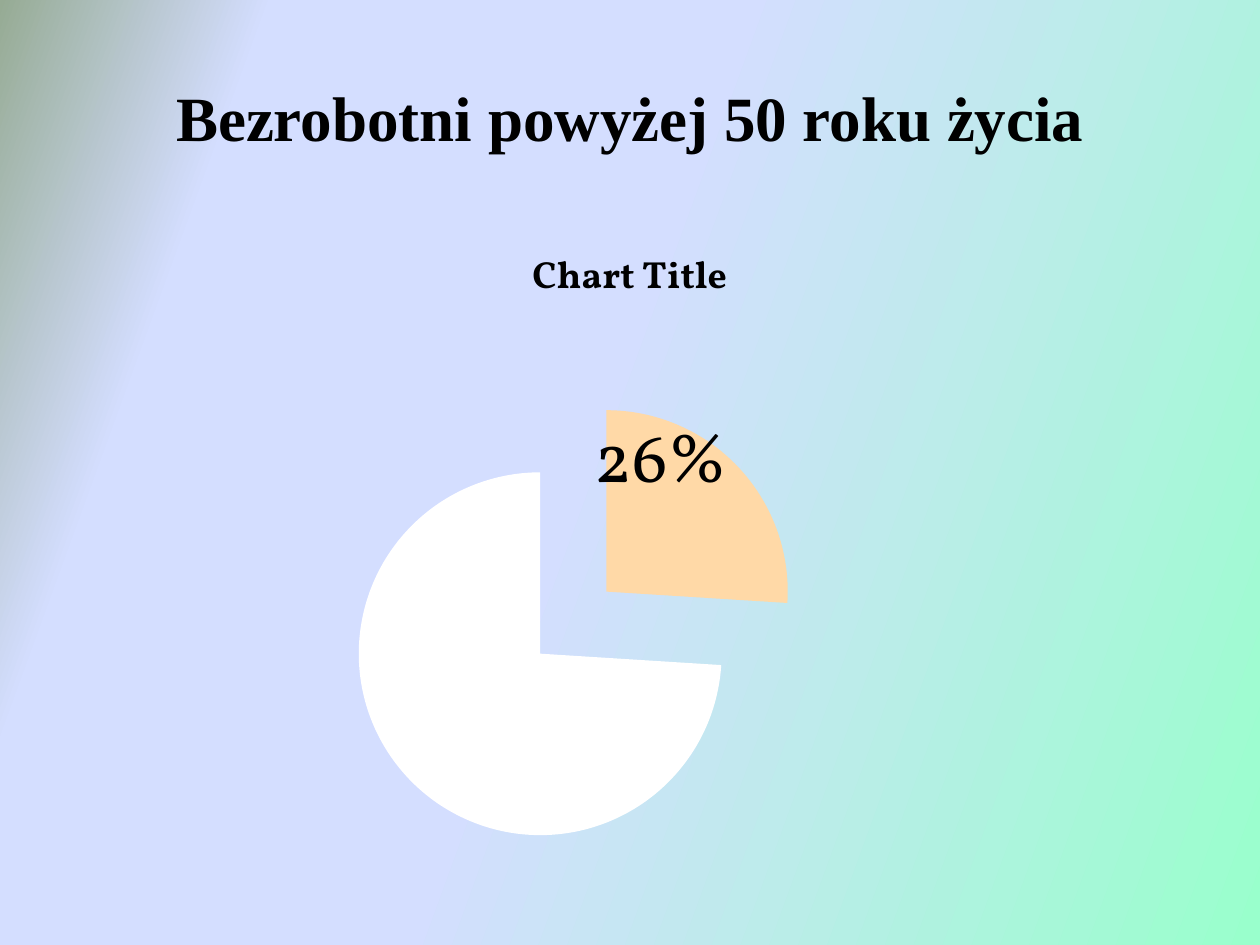
import pptx
import pptx.chart.data
import pptx.dml.color
import pptx.enum.chart
import pptx.enum.text
import pptx.oxml
import pptx.oxml.ns
import pptx.util
from pptx.util import Inches

BLACK = "000000"
WHITE = "FFFFFF"
SLICE_COLORS = ["FFD9A7", WHITE]
BACKGROUND_STOPS = [(0, "99FFCC"), (54, "D4DEFF"), (83, "D4DEFF"), (100, "96AB94")]


def color(value):
    return pptx.dml.color.RGBColor.from_string(value)


def set_font(font, name, size, bold=False, value=BLACK):
    font.name = name
    font.size = pptx.util.Pt(size)
    font.bold = bold
    font.color.rgb = color(value)


def set_background(slide, stops, angle):
    fill = slide.background.fill
    fill.gradient()
    fill.gradient_angle = 360 - angle
    stop_list = fill.gradient_stops._gsLst
    for stop in list(stop_list):
        stop_list.remove(stop)
    namespace = pptx.oxml.ns.nsdecls("a")
    for position, value in stops:
        stop_list.append(pptx.oxml.parse_xml(
            f'<a:gs {namespace} pos="{position * 1000}"><a:srgbClr val="{value}"/></a:gs>'))


def set_title(slide, text):
    title = slide.shapes.title
    title.left, title.top, title.width, title.height = map(Inches, (0.5, 0.3, 9, 1.25))
    title.text_frame.text = text
    title.text_frame.vertical_anchor = pptx.enum.text.MSO_ANCHOR.MIDDLE
    paragraph = title.text_frame.paragraphs[0]
    paragraph.alignment = pptx.enum.text.PP_ALIGN.CENTER
    set_font(paragraph.font, "Times New Roman", 36, True)


def manual_layout(**settings):
    items = "".join(f'<c:{key} val="{value}"/>' for key, value in settings.items())
    return pptx.oxml.parse_xml(
        f'<c:layout {pptx.oxml.ns.nsdecls("c")}><c:manualLayout>{items}</c:manualLayout></c:layout>')


def place_plot(chart, x, y, w, h):
    plot_area = chart._chartSpace.chart.plotArea
    for layout in plot_area.findall(pptx.oxml.ns.qn("c:layout")):
        plot_area.remove(layout)
    plot_area.insert(0, manual_layout(
        layoutTarget="inner", xMode="edge", yMode="edge", x=x, y=y, w=w, h=h))


def explode(series, percent):
    explosion = pptx.oxml.parse_xml(
        f'<c:explosion {pptx.oxml.ns.nsdecls("c")} val="{percent}"/>')
    series._element.find(pptx.oxml.ns.qn("c:dPt")).addprevious(explosion)


def label_point(point, text, x, y):
    label = point.data_label
    run = label.text_frame.paragraphs[0].add_run()
    run.text = text
    set_font(run.font, "Vollkorn", 40)
    label.position = pptx.enum.chart.XL_LABEL_POSITION.CENTER
    index = label._dLbl.find(pptx.oxml.ns.qn("c:idx"))
    index.addnext(manual_layout(x=x, y=y))


def add_pie(slide):
    data = pptx.chart.data.CategoryChartData(number_format="0%")
    data.categories = ["1", "2"]
    data.add_series("Series 1", [0.26, 0.74])
    chart = slide.shapes.add_chart(
        pptx.enum.chart.XL_CHART_TYPE.PIE,
        Inches(0.5), Inches(1.75), Inches(9), Inches(5.15), data).chart
    set_font(chart.font, "Vollkorn", 18, value=WHITE)
    chart.has_legend = False
    chart.has_title = True
    chart.chart_title.text_frame.text = "Chart Title"
    set_font(chart.chart_title.text_frame.paragraphs[0].runs[0].font, "Vollkorn", 21.6, True)
    place_plot(chart, 0.25, 0.27, 0.4, 0.7)
    series = chart.plots[0].series[0]
    for index, value in enumerate(SLICE_COLORS):
        point_format = series.points[index].format
        point_format.fill.solid()
        point_format.fill.fore_color.rgb = color(value)
        point_format.line.fill.background()
    explode(series, 25)
    series.data_labels.show_value = True
    set_font(series.data_labels.font, "Vollkorn", 32, value=WHITE)
    label_point(series.points[0], "26%", -0.01, -0.1)
    label_point(series.points[1], "", 0, 0)


def main():
    presentation = pptx.Presentation()
    presentation.slide_width = Inches(10)
    presentation.slide_height = Inches(7.5)
    slide = presentation.slides.add_slide(presentation.slide_layouts[5])
    set_background(slide, BACKGROUND_STOPS, 200)
    set_title(slide, "Bezrobotni powyżej 50 roku życia")
    add_pie(slide)
    presentation.save("out.pptx")


if __name__ == "__main__":
    main()
